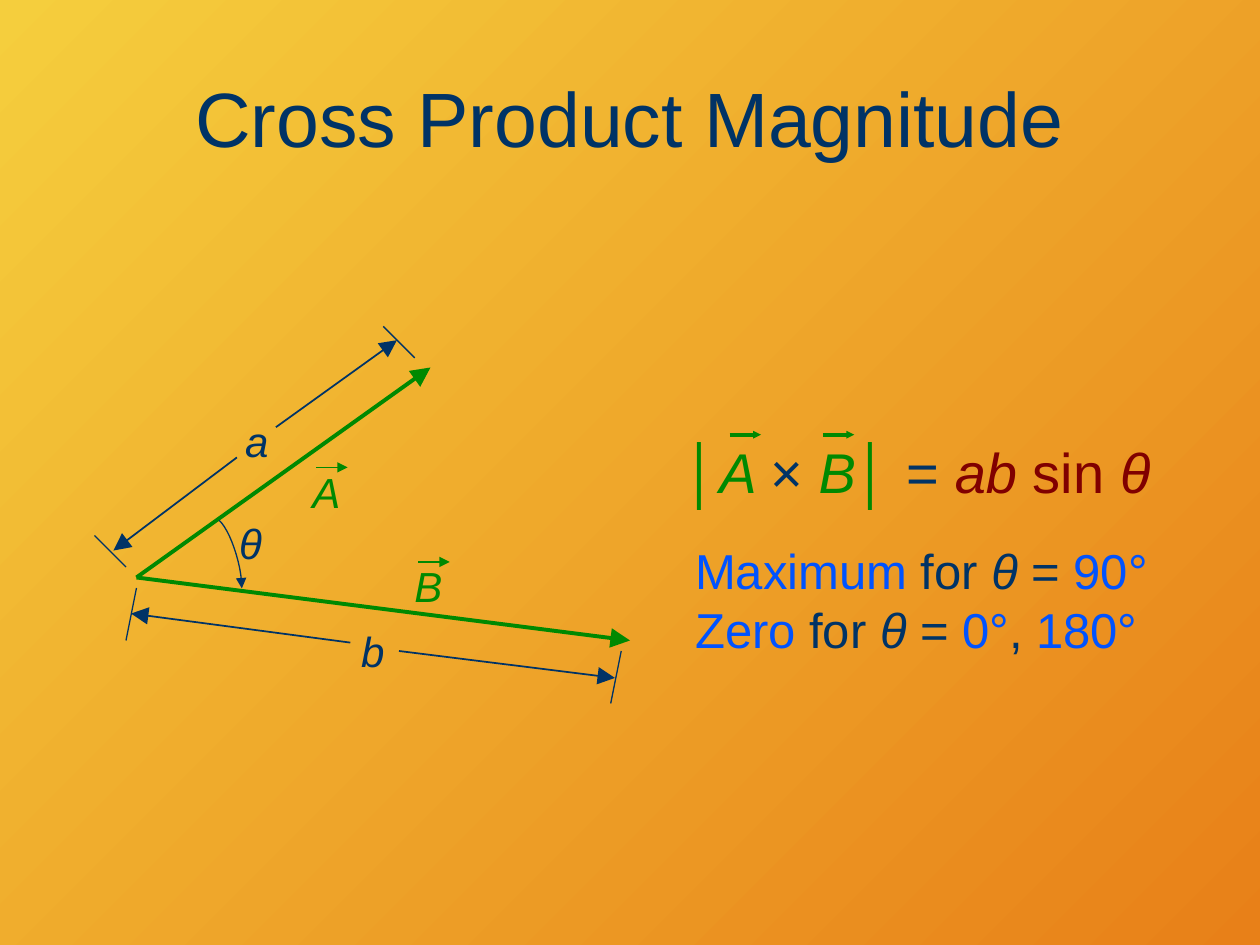
"""Build the slide on the magnitude of a cross product."""
from lxml import etree
from pptx import Presentation
from pptx.dml.color import RGBColor
from pptx.enum import shapes, text
from pptx.oxml import ns
from pptx.util import Pt

NAVY = RGBColor(0x00, 0x33, 0x66)
GREEN = RGBColor(0x00, 0x89, 0x01)
RED = RGBColor(0x80, 0x00, 0x00)
BLUE = RGBColor(0x00, 0x53, 0xFF)
GOLD = RGBColor(0xF5, 0xCE, 0x3D)
RUST = RGBColor(0xE8, 0x80, 0x18)


def write(para, size, runs):
    """Add runs of (words, color, italic) to a paragraph."""
    for words, color, slant in runs:
        run = para.add_run()
        run.text = words
        run.font.name = "Arial"
        run.font.size = Pt(size)
        run.font.italic = slant
        run.font.color.rgb = color


def draw(start, end, color, width, head=None):
    """Add a straight line, with an arrowhead of the given size at its end."""
    line = slide.shapes.add_connector(
        shapes.MSO_CONNECTOR.STRAIGHT, *[Pt(n) for n in start + end])
    line.line.color.rgb = color
    line.line.width = Pt(width)
    if head:
        etree.SubElement(line.line._get_or_add_ln(), ns.qn("a:tailEnd"),
                         type="triangle", w=head, len=head)
    etree.SubElement(line._element.spPr, ns.qn("a:effectLst"))


deck = Presentation()
deck.slide_width, deck.slide_height = Pt(720), Pt(540)
slide = deck.slides.add_slide(deck.slide_layouts[1])
back = slide.background.fill
back.gradient()
back.gradient_angle = 315
for stop, color in zip(back.gradient_stops, (GOLD, RUST)):
    stop.color.rgb = color

title, body = slide.placeholders
title.left, title.top, title.width, title.height = Pt(36), Pt(21.6), Pt(648), Pt(90)
body.left, body.top, body.width, body.height = Pt(383.8), Pt(246.2), Pt(306), Pt(54)
for holder in (title, body):
    holder.text_frame.auto_size = text.MSO_AUTO_SIZE.NONE
title.text_frame.vertical_anchor = text.MSO_ANCHOR.MIDDLE
para = title.text_frame.paragraphs[0]
para.alignment = text.PP_ALIGN.CENTER
write(para, 44, [("Cross Product Magnitude", NAVY, False)])

para = body.text_frame.paragraphs[0]
props = para._p.get_or_add_pPr()
props.set("marL", str(Pt(27)))
props.set("indent", str(Pt(-27)))
etree.SubElement(props, ns.qn("a:buNone"))
para.space_before = Pt(6.4)
write(para, 32, [
    ("│", GREEN, False), ("A ", GREEN, True), ("× ", NAVY, False),
    ("B", GREEN, True), ("│", GREEN, False), (" = ", NAVY, False),
    ("ab", RED, True), (" sin ", RED, False), ("θ", RED, True)])

for tip in ((246, 210), (360, 366)):
    draw((78, 330), tip, GREEN, 2.25, "lg")

for name, left, top, color in (
        ("A", 171.4, 262.8, GREEN), ("B", 229.7, 316.8, GREEN),
        ("a", 131.8, 234, NAVY), ("b", 198, 354.2, NAVY),
        ("θ", 128.2, 292.3, NAVY)):
    label = slide.shapes.add_textbox(Pt(left), Pt(top), Pt(30), Pt(36))
    label.text_frame.word_wrap = True
    label.text_frame.auto_size = text.MSO_AUTO_SIZE.SHAPE_TO_FIT_TEXT
    para = label.text_frame.paragraphs[0]
    para.alignment = text.PP_ALIGN.CENTER
    write(para, 24, [(name, color, True)])
    if color == GREEN:
        x, y = left + 9.3, top + 4.3
        draw((x, y), (x + 18, y), GREEN, 1, "med")

for start, end in (
        ((78, 336), (72, 366)), ((355, 372), (349, 402)),
        ((72, 324), (54, 306)), ((237, 204.5), (219, 186.5))):
    draw(start, end, NAVY, 0.75)

for start, end in (
        ((228, 372), (351.4, 387.4)), ((135.4, 261.4), (64.8, 314.6)),
        ((200.2, 367.2), (74.9, 350.6)), ((157.7, 244.1), (226.8, 194.4))):
    draw(start, end, NAVY, 1, "lg")

for x in (416.9, 470.2):
    draw((x, 248.4), (x + 18, 248.4), GREEN, 2.25, "sm")

knots = ((125.3, 297.4), (131, 302.4), (138.2, 321.8), (138.2, 336.2))
curve = []
for step in range(13):
    t = step / 12
    parts = ((1 - t) ** 3, 3 * t * (1 - t) ** 2, 3 * t * t * (1 - t), t ** 3)
    curve.append([Pt(sum(p * k[axis] for p, k in zip(parts, knots)))
                  for axis in (0, 1)])
path = slide.shapes.build_freeform(*curve[0])
path.add_line_segments(curve[1:], close=False)
angle = path.convert_to_shape()
angle.shadow.inherit = False
angle.fill.background()
angle.line.color.rgb = NAVY
angle.line.width = Pt(0.75)
etree.SubElement(angle.line._get_or_add_ln(), ns.qn("a:tailEnd"), type="triangle")

note = slide.shapes.add_textbox(Pt(390.2), Pt(305.3), Pt(273.6), Pt(74.2))
note.text_frame.word_wrap = False
note.text_frame.auto_size = text.MSO_AUTO_SIZE.SHAPE_TO_FIT_TEXT
first = note.text_frame.paragraphs[0]
second = note.text_frame.add_paragraph()
for para, case, ends in (
        (first, "Maximum", [("90°", BLUE, False)]),
        (second, "Zero", [("0°", BLUE, False), (", ", NAVY, False),
                          ("180°", BLUE, False)])):
    write(para, 28, [(case, BLUE, False), (" for ", NAVY, False),
                     ("θ", NAVY, True), (" = ", NAVY, False)] + ends)

deck.save("out.pptx")
